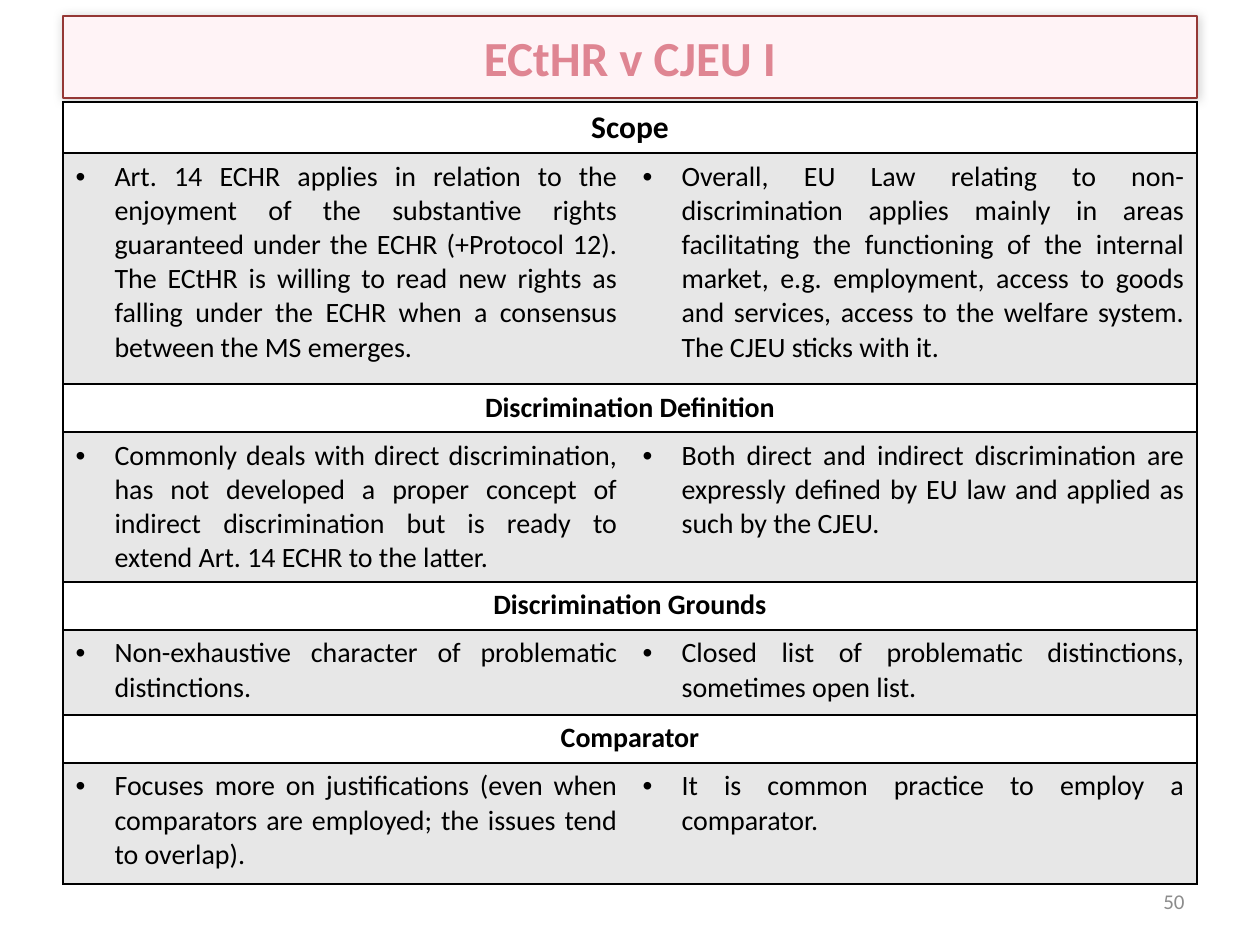
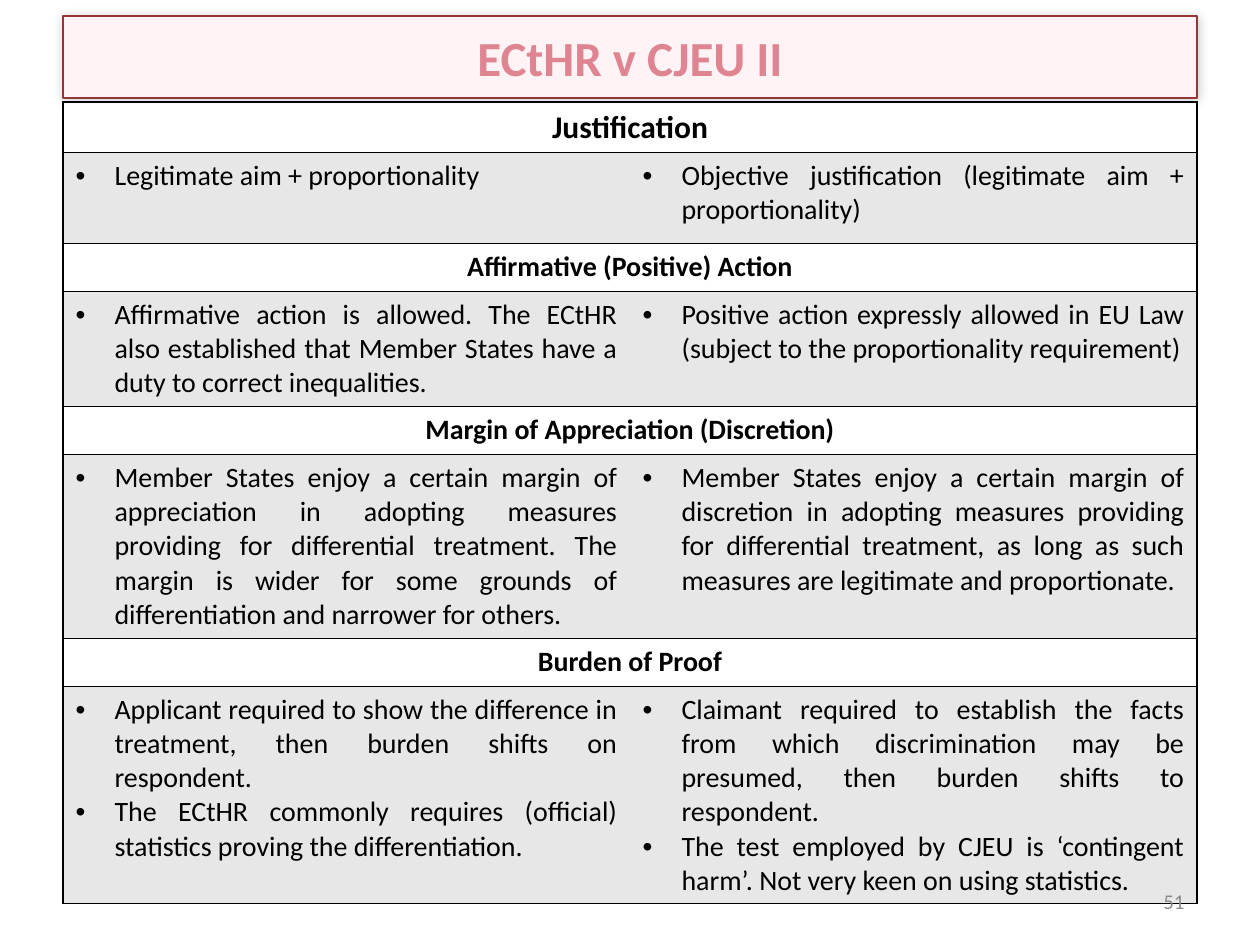
from lxml import etree
from pptx import Presentation
from pptx.dml.color import RGBColor
from pptx.enum.shapes import MSO_SHAPE
from pptx.enum.text import MSO_ANCHOR, PP_ALIGN
from pptx.oxml.ns import qn
from pptx.util import Pt

RECT = MSO_SHAPE.RECTANGLE
MIDDLE = MSO_ANCHOR.MIDDLE
CENTER, RIGHT, JUSTIFY = PP_ALIGN.CENTER, PP_ALIGN.RIGHT, PP_ALIGN.JUSTIFY

FONT = "Calibri"
COLORS = {
    "ink": "000000",
    "header": "FFFFFF",
    "body": "E7E7E7",
    "title_fill": "FFF3F6",
    "title_line": "953735",
    "title_text": "DF8592",
    "number": "8C8C8C",
}
WIDTH, HEIGHT = 1260, 945
LEFT, CONTENT_W = 63, 1134
HEADER_H = 48
INDENT = 39


def px(n):
    return round(n * 914400 / 126)


def rgb(name):
    return RGBColor.from_string(COLORS[name])


def add_color(parent, name):
    return etree.SubElement(parent, qn("a:srgbClr"), val=COLORS[name])


class Deck:
    def __init__(self):
        self.prs = Presentation()
        self.prs.slide_width = px(WIDTH)
        self.prs.slide_height = px(HEIGHT)
        self.slide = None

    def new_slide(self):
        self.slide = self.prs.slides.add_slide(self.prs.slide_layouts[6])

    def style(self, p, size, color="ink", align=CENTER, bold=False):
        p.alignment = align
        p.font.name = FONT
        p.font.size = Pt(size)
        p.font.bold = bold
        p.font.color.rgb = rgb(color)

    def bullet(self, p):
        pPr = p._p.get_or_add_pPr()
        pPr.set("marL", str(px(INDENT)))
        pPr.set("indent", str(-px(INDENT)))
        font = etree.Element(qn("a:buFont"), typeface="Arial")
        char = etree.Element(qn("a:buChar"), char="•")
        pPr.insert(0, font)
        pPr.insert(1, char)

    def title(self, text):
        sp = self.slide.shapes.add_shape(RECT, px(LEFT), px(16), px(CONTENT_W), px(82))
        sp.fill.solid()
        sp.fill.fore_color.rgb = rgb("title_fill")
        sp.line.color.rgb = rgb("title_line")
        sp.line.width = Pt(1)
        sp.shadow.inherit = False
        effects = sp._element.spPr.find(qn("a:effectLst"))
        shadow = etree.SubElement(effects, qn("a:outerShdw"), blurRad=str(Pt(6)),
                                  dist="0", dir=str(315 * 60000), rotWithShape="0")
        etree.SubElement(add_color(shadow, "ink"), qn("a:alpha"), val="20000")
        tf = sp.text_frame
        tf.vertical_anchor = MIDDLE
        tf.text = text
        self.style(tf.paragraphs[0], 28, "title_text", bold=True)

    def borders(self, cell, sides):
        tcPr = cell._tc.get_or_add_tcPr()
        for i, side in enumerate("LRTB"):
            ln = etree.Element(qn("a:ln" + side), w=str(Pt(1)))
            if side in sides:
                add_color(etree.SubElement(ln, qn("a:solidFill")), "ink")
            else:
                etree.SubElement(ln, qn("a:noFill"))
            tcPr.insert(i, ln)

    def cell(self, cell, fill, sides):
        cell.fill.solid()
        cell.fill.fore_color.rgb = rgb(fill)
        self.borders(cell, sides)

    def comparison(self, sections):
        height = sum(HEADER_H + body_h for _, body_h, *_ in sections)
        table = self.slide.shapes.add_table(
            2 * len(sections), 2, px(LEFT), px(102), px(CONTENT_W), px(height)).table
        table.first_row = table.horz_banding = False
        for i, (heading, body_h, *columns) in enumerate(sections):
            top = 2 * i
            table.rows[top].height = px(HEADER_H)
            table.rows[top + 1].height = px(body_h)
            head = table.cell(top, 0)
            head.merge(table.cell(top, 1))
            head.text = heading
            self.style(head.text_frame.paragraphs[0], 16 if i else 18, bold=True)
            for col, (points, edge) in enumerate(zip(columns, "LR")):
                self.cell(table.cell(top, col), "header", "LRTB")
                body = table.cell(top + 1, col)
                self.cell(body, "body", edge + "TB")
                body.text = "\n".join(points)
                for p in body.text_frame.paragraphs:
                    self.style(p, 16, align=JUSTIFY)
                    self.bullet(p)

    def page_number(self, number):
        box = self.slide.shapes.add_textbox(px(903), px(876), px(294), px(50))
        tf = box.text_frame
        tf.word_wrap = True
        tf.vertical_anchor = MIDDLE
        tf.text = str(number)
        self.style(tf.paragraphs[0], 12, "number", RIGHT)


FIRST_PAGE = 50
SLIDES = [
    ("ECtHR v CJEU I", [
        ("Scope", 231,
         ["Art. 14 ECHR applies in relation to the enjoyment of the substantive rights "
          "guaranteed under the ECHR (+Protocol 12). The ECtHR is willing to read new rights "
          "as falling under the ECHR when a consensus between the MS emerges."],
         ["Overall, EU Law relating to non-discrimination applies mainly in areas "
          "facilitating the functioning of the internal market, e.g. employment, access to "
          "goods and services, access to the welfare system. The CJEU sticks with it."]),
        ("Discrimination Definition", 150,
         ["Commonly deals with direct discrimination, has not developed a proper concept of "
          "indirect discrimination but is ready to extend Art. 14 ECHR to the latter."],
         ["Both direct and indirect discrimination are expressly defined by EU law and "
          "applied as such by the CJEU."]),
        ("Discrimination Grounds", 85,
         ["Non-exhaustive character of problematic distinctions."],
         ["Closed list of problematic distinctions, sometimes open list."]),
        ("Comparator", 121,
         ["Focuses more on justifications (even when comparators are employed; the issues "
          "tend to overlap)."],
         ["It is common practice to employ a comparator."]),
    ]),
    ("ECtHR v CJEU II", [
        ("Justification", 91,
         ["Legitimate aim + proportionality"],
         ["Objective justification (legitimate aim + proportionality)"]),
        ("Affirmative (Positive) Action", 115,
         ["Affirmative action is allowed. The ECtHR also established that Member States have "
          "a duty to correct inequalities."],
         ["Positive action expressly allowed in EU Law (subject to the proportionality "
          "requirement)"]),
        ("Margin of Appreciation (Discretion)", 184,
         ["Member States enjoy a certain margin of appreciation in adopting measures "
          "providing for differential treatment. The margin is wider for some grounds of "
          "differentiation and narrower for others."],
         ["Member States enjoy a certain margin of discretion in adopting measures providing "
          "for differential treatment, as long as such measures are legitimate and "
          "proportionate."]),
        ("Burden of Proof", 217,
         ["Applicant required to show the difference in treatment, then burden shifts on "
          "respondent.",
          "The ECtHR commonly requires (official) statistics proving the differentiation."],
         ["Claimant required to establish the facts from which discrimination may be "
          "presumed, then burden shifts to respondent.",
          "The test employed by CJEU is ‘contingent harm’. Not very keen on using "
          "statistics."]),
    ]),
]


def main():
    deck = Deck()
    for number, (title, sections) in enumerate(SLIDES, FIRST_PAGE):
        deck.new_slide()
        deck.title(title)
        deck.comparison(sections)
        deck.page_number(number)
    deck.prs.save("out.pptx")


if __name__ == "__main__":
    main()
